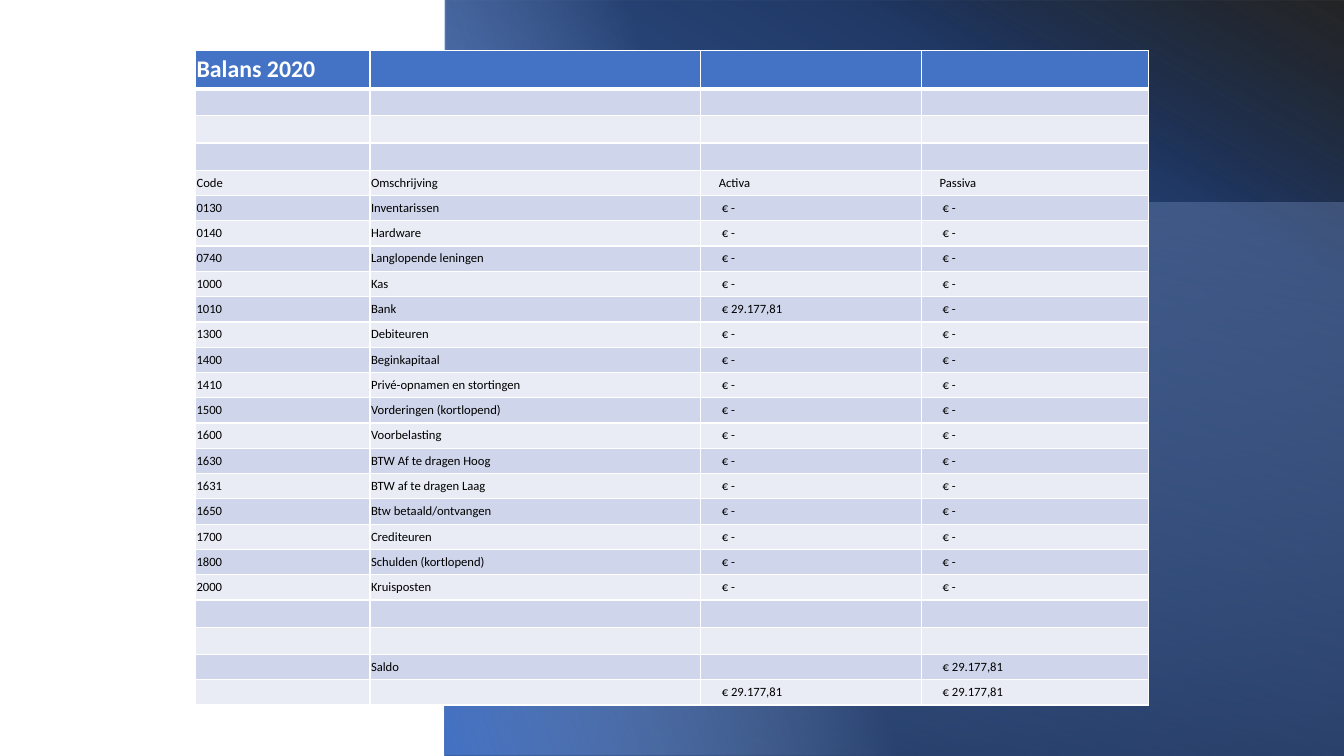
from dataclasses import dataclass

from lxml.etree import SubElement as Sub
from pptx import Presentation
from pptx.dml.color import RGBColor as Rgb
from pptx.enum.shapes import MSO_SHAPE as Kind
from pptx.enum.text import MSO_ANCHOR as Anchor
from pptx.oxml.ns import qn
from pptx.slide import Slide
from pptx.table import _Cell as Cell
from pptx.util import Inches, Pt


@dataclass(frozen=True)
class Theme:
    font: str = "Calibri"
    title: int = 17
    body: int = 9
    blue: str = "4472C4"
    navy: str = "203864"
    sky: str = "8FAADC"
    black: str = "000000"
    white: str = "FFFFFF"
    dark: str = "CFD5EA"
    light: str = "E9EBF5"


@dataclass(frozen=True)
class Stop:
    pos: int
    color: str
    alpha: int = 100


@dataclass(frozen=True)
class Panel:
    left: float
    top: float
    width: float
    height: float
    angle: int
    stops: tuple[Stop, ...]
    flip: bool = False
    turn: int = 0


@dataclass(frozen=True)
class Entry:
    code: str = ""
    name: str = ""
    debit: str = ""
    credit: str = ""


LOOK = Theme()
NIL = "€ -"
SUM = "€ 29.177,81"

PANELS = (
    Panel(4.42, 0, 8.92, 7.5, 300,
          (Stop(2, LOOK.blue), Stop(78, LOOK.navy), Stop(100, LOOK.black, 85))),
    Panel(4.41, 2.01, 8.92, 5.49, 80,
          (Stop(0, LOOK.sky, 30), Stop(100, LOOK.black, 44)), flip=True),
    Panel(4.44, -0.04, 7.5, 7.57, 110,
          (Stop(56, LOOK.sky, 0), Stop(100, LOOK.blue)), flip=True, turn=90),
)

BOOKS = (
    ("0130", "Inventarissen"),
    ("0140", "Hardware"),
    ("0740", "Langlopende leningen"),
    ("1000", "Kas"),
    ("1010", "Bank"),
    ("1300", "Debiteuren"),
    ("1400", "Beginkapitaal"),
    ("1410", "Privé-opnamen en stortingen"),
    ("1500", "Vorderingen (kortlopend)"),
    ("1600", "Voorbelasting"),
    ("1630", "BTW Af te dragen Hoog"),
    ("1631", "BTW af te dragen Laag"),
    ("1650", "Btw betaald/ontvangen"),
    ("1700", "Crediteuren"),
    ("1800", "Schulden (kortlopend)"),
    ("2000", "Kruisposten"),
)

ROWS = (
    Entry("Balans 2020"),
    *[Entry()] * 3,
    Entry("Code", "Omschrijving", "Activa", "Passiva"),
    *(Entry(code, name, SUM if name == "Bank" else NIL, NIL) for code, name in BOOKS),
    *[Entry()] * 2,
    Entry(name="Saldo", credit=SUM),
    Entry(debit=SUM, credit=SUM),
)

WIDTHS = (1.73, 3.28, 2.19, 2.25)
HIGH, HEAD, GAP = 6.5, 0.38, 0.27


def blend(panel: Panel, fill) -> None:
    fill.clear()
    fill.set("rotWithShape", "1")
    stops = Sub(fill, qn("a:gsLst"))
    for stop in panel.stops:
        mark = Sub(stops, qn("a:gs"), pos=str(stop.pos * 1000))
        tint = Sub(mark, qn("a:srgbClr"), val=stop.color)
        if stop.alpha < 100:
            Sub(tint, qn("a:alpha"), val=str(stop.alpha * 1000))
    Sub(fill, qn("a:lin"), ang=str(panel.angle * 60000), scaled="0")


def paint(slide: Slide, panel: Panel) -> None:
    box = slide.shapes.add_shape(
        Kind.RECTANGLE, Inches(panel.left), Inches(panel.top),
        Inches(panel.width), Inches(panel.height))
    box.shadow.inherit = False
    box.line.fill.background()
    box.fill.gradient()
    blend(panel, box.element.spPr.find(qn("a:gradFill")))
    box.rotation = panel.turn
    if panel.flip:
        box.element.spPr.xfrm.set("flipH", "1")


def write(cell: Cell, text: str, *, size: int, color: str,
          bold: bool = False, left: float = 0.01) -> None:
    cell.vertical_anchor = Anchor.BOTTOM
    cell.margin_left = Inches(left)
    cell.margin_top = cell.margin_right = Inches(0.01)
    cell.margin_bottom = Inches(0.05)
    line = cell.text_frame.paragraphs[0]
    if not text:
        Sub(line._p, qn("a:endParaRPr"), sz=str(size * 100))
        return
    run = line.add_run()
    run.text = text
    run.font.name = LOOK.font
    run.font.size = Pt(size)
    run.font.bold = bold
    run.font.color.rgb = Rgb.from_string(color)


def dress(cell: Cell, color: str, top: int, base: int) -> None:
    props = cell._tc.get_or_add_tcPr()
    for side, size in (("L", 1), ("R", 1), ("T", top), ("B", base)):
        edge = Sub(props, qn(f"a:ln{side}"), w=str(Pt(size)))
        Sub(Sub(edge, qn("a:solidFill")), qn("a:srgbClr"), val=LOOK.white)
    cell.fill.solid()
    cell.fill.fore_color.rgb = Rgb.from_string(color)


def tabulate(slide: Slide) -> None:
    grid = slide.shapes.add_table(
        len(ROWS), len(WIDTHS), Inches(1.94), Inches(0.5),
        Inches(sum(WIDTHS)), Inches(HIGH)).table
    for col, width in zip(grid.columns, WIDTHS):
        col.width = Inches(width)
    gaps = ROWS.count(Entry())
    step = (HIGH - HEAD - gaps * GAP) / (len(ROWS) - 1 - gaps)
    for row, entry in enumerate(ROWS):
        first = row == 0
        grid.rows[row].height = Inches(HEAD if first else GAP if entry == Entry() else step)
        shade = LOOK.blue if first else LOOK.dark if row % 2 else LOOK.light
        texts = (entry.code, entry.name, entry.debit, entry.credit)
        for col, text in enumerate(texts):
            cell = grid.cell(row, col)
            left = 0.01 if col < 2 else 0.21 if text.startswith("€") else 0.18
            write(cell, text, size=LOOK.title if first else LOOK.body,
                  color=LOOK.white if first else LOOK.black, bold=first, left=left)
            dress(cell, shade, 3 if row == 1 else 1, 3 if first else 1)


def main() -> None:
    deck = Presentation()
    deck.slide_width, deck.slide_height = Inches(13.33), Inches(7.5)
    slide = deck.slides.add_slide(deck.slide_layouts[6])
    for panel in PANELS:
        paint(slide, panel)
    tabulate(slide)
    deck.save("out.pptx")


if __name__ == "__main__":
    main()
